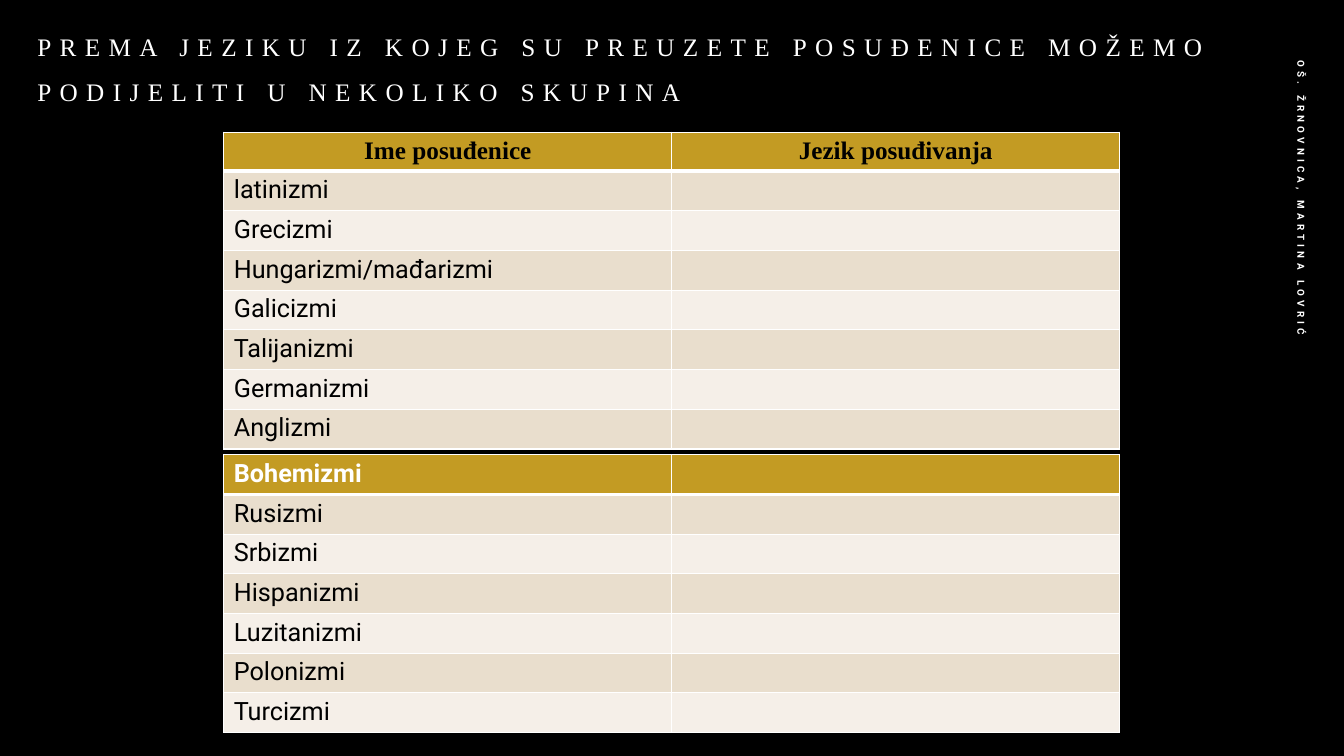
from dataclasses import dataclass

from lxml import etree
from pptx import Presentation
from pptx.dml.color import RGBColor
from pptx.enum.text import MSO_ANCHOR, PP_ALIGN
from pptx.oxml.ns import qn
from pptx.util import Cm, Pt

LEFT, CENTER, RIGHT = PP_ALIGN.LEFT, PP_ALIGN.CENTER, PP_ALIGN.RIGHT
BOTTOM, MIDDLE = MSO_ANCHOR.BOTTOM, MSO_ANCHOR.MIDDLE


@dataclass(frozen=True)
class Theme:
    black: str = "000000"
    white: str = "FFFFFF"
    gold: str = "C39B23"
    bands: tuple = ("E9DECD", "F5EFE8")
    serif: str = "Times New Roman"
    sans: str = "Roboto"
    body: int = 18
    small: int = 7
    thin: int = 1
    thick: int = 3


THEME = Theme()
HEADS = ["Ime posuđenice", "Jezik posuđivanja"]
UPPER = ["latinizmi", "Grecizmi", "Hungarizmi/mađarizmi", "Galicizmi",
         "Talijanizmi", "Germanizmi", "Anglizmi"]
LOWER = ["Rusizmi", "Srbizmi", "Hispanizmi", "Luzitanizmi", "Polonizmi", "Turcizmi"]


def add_run(par, text, face, size, color, bold=False, gap=0):
    run = par.add_run()
    run.text = text
    font = run.font
    font.name, font.size, font.bold = face, Pt(size), bold
    font.color.rgb = RGBColor.from_string(color)
    if gap:
        run._r.get_or_add_rPr().set("spc", str(gap * 100))


def add_label(slide, box, text, face, size, gap, anchor, align=LEFT,
              bold=False, lead=1.0, turn=0):
    shape = slide.shapes.add_textbox(*map(Cm, box))
    shape.rotation = turn
    frame = shape.text_frame
    frame.word_wrap = True
    frame.vertical_anchor = anchor
    par = frame.paragraphs[0]
    par.alignment, par.line_spacing = align, lead
    add_run(par, text, face, size, THEME.white, bold, gap)


def add_edges(cell, top, base):
    props = cell._tc.get_or_add_tcPr()
    widths = {"L": THEME.thin, "R": THEME.thin, "T": top, "B": base}
    for side, width in widths.items():
        line = etree.SubElement(props, qn(f"a:ln{side}"), w=str(Pt(width)))
        fill = etree.SubElement(line, qn("a:solidFill"))
        etree.SubElement(fill, qn("a:srgbClr"), val=THEME.white)


def add_grid(slide, top, heads, names, face, color, align, high):
    rows = [heads] + [[name, ""] for name in names]
    frame = slide.shapes.add_table(len(rows), 2, Cm(5.64), Cm(top),
                                   Cm(22.58), Cm(high + len(names)))
    table = frame.table
    table.first_row = table.horz_banding = False
    for i, texts in enumerate(rows):
        head = i == 0
        table.rows[i].height = Cm(high if head else 1)
        for j, text in enumerate(texts):
            cell = table.cell(i, j)
            cell.margin_top = cell.margin_bottom = Cm(0.11)
            add_edges(cell, THEME.thick if i == 1 else THEME.thin,
                      THEME.thick if head else THEME.thin)
            cell.fill.solid()
            tint = THEME.gold if head else THEME.bands[(i - 1) % 2]
            cell.fill.fore_color.rgb = RGBColor.from_string(tint)
            par = cell.text_frame.paragraphs[0]
            par.alignment = align if head else LEFT
            if text:
                add_run(par, text, face if head else THEME.sans, THEME.body,
                        color if head else THEME.black, head)


def main():
    deck = Presentation()
    deck.slide_width, deck.slide_height = Cm(33.87), Cm(19.05)
    slide = deck.slides.add_slide(deck.slide_layouts[6])
    back = slide.background.fill
    back.solid()
    back.fore_color.rgb = RGBColor.from_string(THEME.black)

    add_label(slide, (0.69, 0.43, 32.84, 2.39),
              "PREMA JEZIKU IZ KOJEG SU PREUZETE POSUĐENICE MOŽEMO "
              "PODIJELITI U NEKOLIKO SKUPINA",
              THEME.serif, THEME.body, 6, BOTTOM, lead=1.5)
    add_grid(slide, 3.33, HEADS, UPPER, THEME.serif, THEME.black, CENTER, 0.96)
    add_grid(slide, 11.46, ["Bohemizmi", ""], LOWER, THEME.sans, THEME.white, LEFT, 1)
    add_label(slide, (29.08, 4.47, 7.42, 1.02), "OŠ. ŽRNOVNICA, MARTINA LOVRIĆ",
              THEME.sans, THEME.small, 3, MIDDLE, RIGHT, bold=True, turn=90)
    deck.save("out.pptx")


if __name__ == "__main__":
    main()
